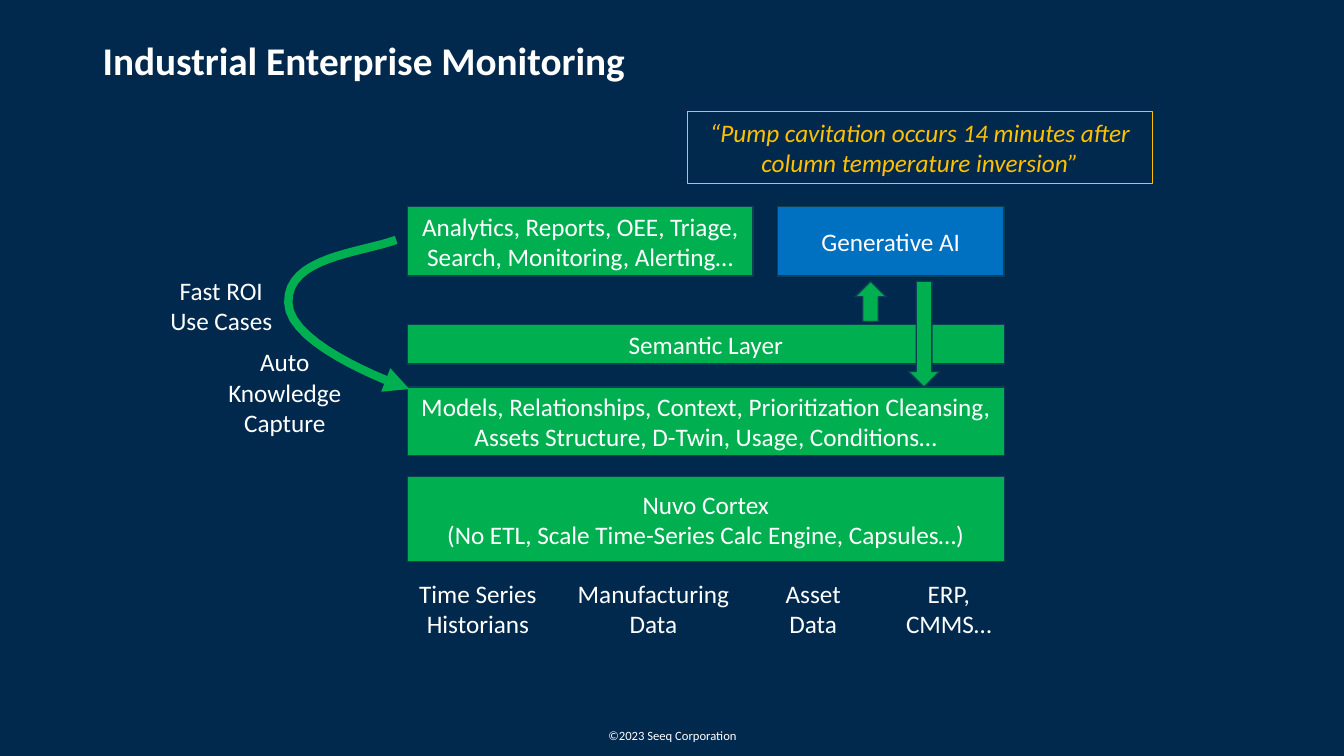
import pptx
import pptx.util
import pptx.dml.color
import pptx.enum.shapes
import pptx.enum.text
import pptx.oxml.ns
from lxml import etree

Inches = pptx.util.Inches
RGBColor = pptx.dml.color.RGBColor
SHAPE = pptx.enum.shapes.MSO_SHAPE
ALIGN = pptx.enum.text.PP_ALIGN
ANCHOR = pptx.enum.text.MSO_ANCHOR

NAVY = RGBColor(0x00, 0x29, 0x4D)
GREEN = RGBColor(0x00, 0xB0, 0x50)
BLUE = RGBColor(0x00, 0x70, 0xC0)
EDGE = RGBColor(0x0D, 0x40, 0x55)
GOLD = RGBColor(0xFF, 0xC0, 0x00)
WHITE = RGBColor(0xFF, 0xFF, 0xFF)

LEFT, WIDE = 4.04, 5.92  # the stack of layers

LAYERS = [
    # left, top, width, height, fill, text
    (LEFT, 3.22, WIDE, 0.39, GREEN, "Semantic Layer"),
    (LEFT, 4.73, WIDE, 0.84, GREEN,
     "Nuvo Cortex\n(No ETL, Scale Time-Series Calc Engine, Capsules…)"),
    (LEFT, 2.05, 3.43, 0.69, GREEN,
     "Analytics, Reports, OEE, Triage, Search, Monitoring, Alerting…"),
    (7.71, 2.05, 2.25, 0.69, BLUE, "Generative AI"),
    (LEFT, 3.84, WIDE, 0.68, GREEN,
     "Models, Relationships, Context, Prioritization Cleansing, "
     "Assets Structure, D-Twin, Usage, Conditions…"),
]

LABELS = [
    # left, top, width, height, text
    (4.05, 5.69, 1.38, 0.71, "Time Series\nHistorians"),
    (5.62, 5.69, 1.72, 0.71, "Manufacturing\nData"),
    (7.64, 5.69, 0.85, 0.71, "Asset\nData"),
    (8.87, 5.69, 1.08, 0.71, "ERP,\nCMMS…"),
    (1.53, 2.68, 1.33, 0.71, "Fast ROI Use Cases"),
    (2.16, 3.39, 1.33, 1.01, "Auto Knowledge Capture"),
]

# Four control points for each part of the feedback curve
CURVES = [
    ((3.93, 2.38), (3.57, 2.51), (2.85, 2.55), (2.86, 3.0)),
    ((2.86, 3.0), (2.86, 3.45), (4.06, 3.86), (4.06, 3.86)),
]
STEPS = 16


def write(shape, text, size=18, color=WHITE, bold=False, italic=False,
          align=ALIGN.CENTER, anchor=ANCHOR.MIDDLE):
    frame = shape.text_frame
    frame.word_wrap = True
    frame.vertical_anchor = anchor
    frame.text = text
    for para in frame.paragraphs:
        para.alignment = align
        for run in para.runs:
            font = run.font
            font.name = "Calibri"
            font.size = pptx.util.Pt(size)
            font.bold = bold
            font.italic = italic
            font.color.rgb = color


def add_text(slide, left, top, width, height, text, **style):
    box = slide.shapes.add_textbox(
        Inches(left), Inches(top), Inches(width), Inches(height))
    write(box, text, **style)
    return box


def add_block(slide, kind, left, top, width, height, fill=None,
              edge=EDGE, weight=1):
    block = slide.shapes.add_shape(
        kind, Inches(left), Inches(top), Inches(width), Inches(height))
    block.shadow.inherit = False
    if fill is None:
        block.fill.background()
    else:
        block.fill.solid()
        block.fill.fore_color.rgb = fill
    block.line.color.rgb = edge
    block.line.width = pptx.util.Pt(weight)
    return block


def bezier(points, t):
    """Give the place at t, from 0 to 1, on a cubic curve."""
    weights = ((1 - t) ** 3, 3 * t * (1 - t) ** 2, 3 * t ** 2 * (1 - t), t ** 3)
    return tuple(Inches(sum(w * p[axis] for w, p in zip(weights, points)))
                 for axis in (0, 1))


def add_curve(slide):
    """Draw the feedback arrow from the analytics down to the models."""
    start = bezier(CURVES[0], 0)
    path = [bezier(curve, step / STEPS)
            for curve in CURVES for step in range(1, STEPS + 1)]
    builder = slide.shapes.build_freeform(start[0], start[1])
    builder.add_line_segments(path, close=False)
    arrow = builder.convert_to_shape()
    arrow.shadow.inherit = False
    arrow.fill.background()
    arrow.line.color.rgb = GREEN
    arrow.line.width = pptx.util.Pt(6)
    qn = pptx.oxml.ns.qn
    line = arrow.element.spPr.find(qn("a:ln"))
    etree.SubElement(line, qn("a:round"))
    etree.SubElement(line, qn("a:tailEnd"), type="triangle")


def main():
    deck = pptx.Presentation()
    deck.slide_width = Inches(13.33)
    deck.slide_height = Inches(7.5)
    slide = deck.slides.add_slide(deck.slide_layouts[6])
    slide.background.fill.solid()
    slide.background.fill.fore_color.rgb = NAVY

    add_text(slide, 5.17, 7.1, 3, 0.4, "©2023 Seeq Corporation", size=9)
    title = add_text(slide, 0.92, 0.2, 11.5, 0.84,
                     "Industrial Enterprise Monitoring",
                     size=28, bold=True, align=ALIGN.LEFT)
    title.text_frame.paragraphs[0].line_spacing = 0.9

    for *place, fill, text in LAYERS:
        write(add_block(slide, SHAPE.RECTANGLE, *place, fill), text)
    for label in LABELS:
        add_text(slide, *label, anchor=ANCHOR.TOP)
    add_curve(slide)

    quote = add_block(slide, SHAPE.RECTANGLE, 6.82, 1.11, 4.61, 0.71,
                      edge=GOLD, weight=0.75)
    write(quote, "“Pump cavitation occurs 14 minutes after "
          "column temperature inversion”",
          color=GOLD, italic=True, anchor=ANCHOR.TOP)

    add_block(slide, SHAPE.UP_ARROW, 8.48, 2.79, 0.31, 0.4, GREEN)
    down = add_block(slide, SHAPE.UP_ARROW, 9.01, 2.79, 0.31, 1.05, GREEN)
    down.rotation = 180

    deck.save("out.pptx")


if __name__ == "__main__":
    main()
